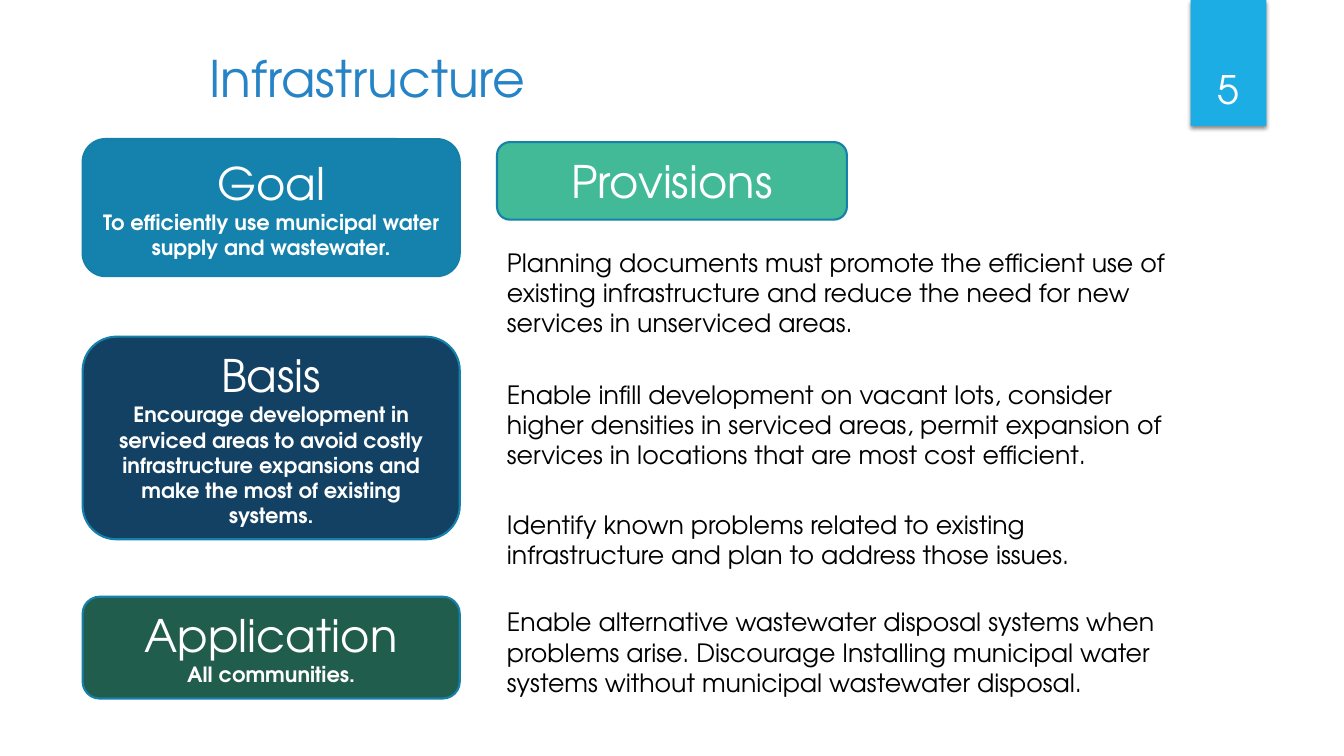
from lxml.etree import SubElement
from pptx import Presentation
from pptx.dml.color import RGBColor
from pptx.enum.shapes import MSO_SHAPE
from pptx.enum.text import MSO_ANCHOR, PP_ALIGN
from pptx.oxml.ns import qn
from pptx.util import Inches, Pt

FONT = "TeX Gyre Adventor"
COLORS = {
    "title": "2683C6",
    "ribbon": "1CADE4",
    "border": "1580A9",
    "goal": "1482AC",
    "basis": "134163",
    "application": "215D4C",
    "provisions": "42BA97",
    "white": "FFFFFF",
    "black": "000000",
}
CARDS = [
    ("Goal", "To efficiently use municipal water supply and wastewater.",
     "goal", (0.82, 1.38, 3.74, 1.36)),
    ("Basis", "Encourage development in serviced areas to avoid costly "
     "infrastructure expansions and make the most of existing systems.",
     "basis", (0.82, 3.34, 3.74, 2.01)),
    ("Application", "All communities.", "application", (0.82, 5.92, 3.74, 1.01)),
    ("Provisions", None, "provisions", (4.93, 1.41, 3.47, 0.77)),
]
PROVISIONS = [
    ("Planning documents must promote the efficient use of existing "
     "infrastructure and reduce the need for new services in unserviced areas.",
     2.4, 1.01),
    ("Enable infill development on vacant lots, consider higher densities in "
     "serviced areas, permit expansion of services in locations that are most "
     "cost efficient.", 3.71, 1.01),
    ("Identify known problems related to existing infrastructure and plan to "
     "address those issues.", 5, 0.71),
    ("Enable alternative wastewater disposal systems when problems arise. "
     "Discourage Installing municipal water systems without municipal "
     "wastewater disposal.", 5.97, 1.01),
]


def color(name):
    """Return the named colour."""
    return RGBColor.from_string(COLORS[name])


def write(paragraph, text, size=18, ink="white", bold=False, align=PP_ALIGN.CENTER):
    """Put formatted text in a paragraph."""
    paragraph.alignment = align
    run = paragraph.add_run()
    run.text = text
    run.font.name = FONT
    run.font.size = Pt(size)
    run.font.bold = bold
    run.font.color.rgb = color(ink)


def add_block(slide, kind, box, fill=None, border=None):
    """Add a preset shape without shadow, filled and outlined as asked."""
    shape = slide.shapes.add_shape(kind, *map(Inches, box))
    shape.shadow.inherit = False
    if fill:
        shape.fill.solid()
        shape.fill.fore_color.rgb = color(fill)
    else:
        shape.fill.background()
    if border:
        shape.line.color.rgb = color(border)
        shape.line.width = Pt(1.5)
    else:
        shape.line.fill.background()
    shape.text_frame.word_wrap = True
    return shape


def add_label(slide, text, box, anchor, **text_format):
    """Add a wrapped text box with one line of text."""
    frame = slide.shapes.add_textbox(*map(Inches, box)).text_frame
    frame.word_wrap = True
    frame.vertical_anchor = anchor
    write(frame.paragraphs[0], text, **text_format)


def add_ribbon(slide, number, box):
    """Add the shadowed page-number ribbon."""
    left, top, width, height = box
    ribbon = add_block(slide, MSO_SHAPE.RECTANGLE, box, "ribbon")
    effects = ribbon.element.spPr.find(qn("a:effectLst"))
    shadow = SubElement(effects, qn("a:outerShdw"), blurRad=str(Pt(3)),
                        dist=str(Pt(2)), dir="5400000", rotWithShape="0")
    tint = SubElement(shadow, qn("a:srgbClr"), val=COLORS["black"])
    SubElement(tint, qn("a:alpha"), val="45000")
    add_label(slide, number, (left - 0.09, top + 0.32, width + 0.17, height - 0.41),
              MSO_ANCHOR.BOTTOM, size=28)


def add_card(slide, heading, detail, fill, box):
    """Add a rounded card with a heading and an optional detail."""
    card = add_block(slide, MSO_SHAPE.ROUNDED_RECTANGLE, box, fill, "border")
    frame = card.text_frame
    frame.vertical_anchor = MSO_ANCHOR.MIDDLE
    write(frame.paragraphs[0], heading, size=32)
    if detail:
        write(frame.add_paragraph(), detail, size=15, bold=True)


def add_provision(slide, text, box):
    """Add one provision in an unfilled pentagon."""
    frame = add_block(slide, MSO_SHAPE.PENTAGON, box).text_frame
    frame.vertical_anchor = MSO_ANCHOR.TOP
    write(frame.paragraphs[0], text, ink="black", align=PP_ALIGN.LEFT)


def main():
    """Build and save the slide."""
    presentation = Presentation()
    presentation.slide_width = Inches(13.33)
    presentation.slide_height = Inches(7.5)
    slide = presentation.slides.add_slide(presentation.slide_layouts[6])
    add_ribbon(slide, "5", (11.81, 0, 0.75, 1.25))
    add_label(slide, "Infrastructure", (1.98, 0.38, 9.58, 0.77), MSO_ANCHOR.MIDDLE,
              size=36, ink="title", align=PP_ALIGN.LEFT)
    for card in CARDS:
        add_card(slide, *card)
    for text, top, height in PROVISIONS:
        add_provision(slide, text, (4.93, top, 7.06, height))
    presentation.save("out.pptx")


if __name__ == "__main__":
    main()
